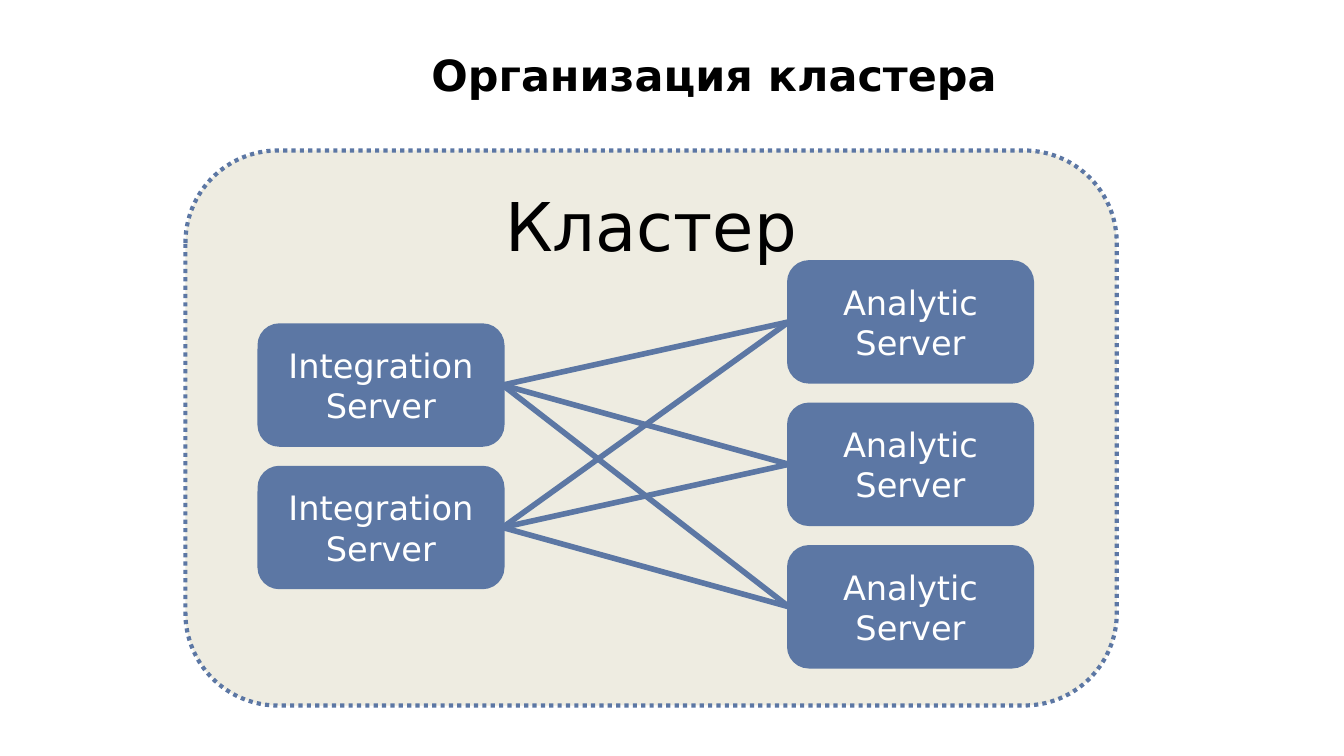
from dataclasses import dataclass
from itertools import product

from lxml import etree
from pptx import Presentation
from pptx.dml.color import RGBColor
from pptx.enum import dml, shapes, text
from pptx.oxml import ns
from pptx.util import Inches, Pt


@dataclass(frozen=True)
class Theme:
    font: str = "DejaVu Sans"
    blue: RGBColor = RGBColor(0x5C, 0x77, 0xA4)
    beige: RGBColor = RGBColor(0xEE, 0xEC, 0xE1)
    black: RGBColor = RGBColor(0, 0, 0)
    white: RGBColor = RGBColor(255, 255, 255)
    title_size: int = 23
    cluster_size: int = 36
    server_size: int = 18


theme = Theme()


def write(frame, words, size, color, align, anchor, bold=False):
    frame.word_wrap = True
    frame.auto_size = text.MSO_AUTO_SIZE.NONE
    frame.vertical_anchor = anchor
    frame.text = words
    paragraph = frame.paragraphs[0]
    paragraph.alignment = align
    paragraph.font.name = theme.font
    paragraph.font.size = Pt(size)
    paragraph.font.bold = bold
    paragraph.font.color.rgb = color


def add_block(left, top, width, height, fill, line_width):
    block = slide.shapes.add_shape(
        shapes.MSO_SHAPE.ROUNDED_RECTANGLE,
        Inches(left), Inches(top), Inches(width), Inches(height))
    block.shadow.inherit = False
    block.fill.solid()
    block.fill.fore_color.rgb = fill
    block.line.color.rgb = theme.blue
    block.line.width = Pt(line_width)
    return block


prs = Presentation()
prs.slide_width = Inches(10)
prs.slide_height = Inches(10 * 9 / 16)
slide = prs.slides.add_slide(prs.slide_layouts[5])

title = slide.shapes.title
title.left, title.top = Inches(3.11), Inches(0.29)
title.width, title.height = Inches(6.64), Inches(0.53)
write(title.text_frame, "Организация кластера", theme.title_size, theme.black,
      text.PP_ALIGN.LEFT, text.MSO_ANCHOR.MIDDLE, bold=True)

cluster = add_block(1.38, 1.12, 6.93, 4.13, theme.beige, 2.25)
cluster.line.dash_style = dml.MSO_LINE.ROUND_DOT
write(cluster.text_frame, "Кластер", theme.cluster_size, theme.black,
      text.PP_ALIGN.CENTER, text.MSO_ANCHOR.TOP)

server_width, server_height, server_pitch = 1.81, 0.89, 1.06
server_groups = []
for label, left, top, count in [("Integration Server", 1.93, 2.42, 2),
                                ("Analytic Server", 5.87, 1.95, 3)]:
    group = []
    for row in range(count):
        server = add_block(left, top + row * server_pitch,
                           server_width, server_height, theme.blue, 2)
        write(server.text_frame, label, theme.server_size, theme.white,
              text.PP_ALIGN.CENTER, text.MSO_ANCHOR.MIDDLE)
        group.append(server)
    server_groups.append(group)

for integration, analytic in product(*server_groups):
    link = slide.shapes.add_connector(shapes.MSO_CONNECTOR.STRAIGHT, 0, 0, 0, 0)
    link.begin_connect(integration, 3)
    link.end_connect(analytic, 1)
    link.line.color.rgb = theme.blue
    link.line.width = Pt(3)
    etree.SubElement(link._element.spPr, ns.qn("a:effectLst"))

prs.save("out.pptx")
